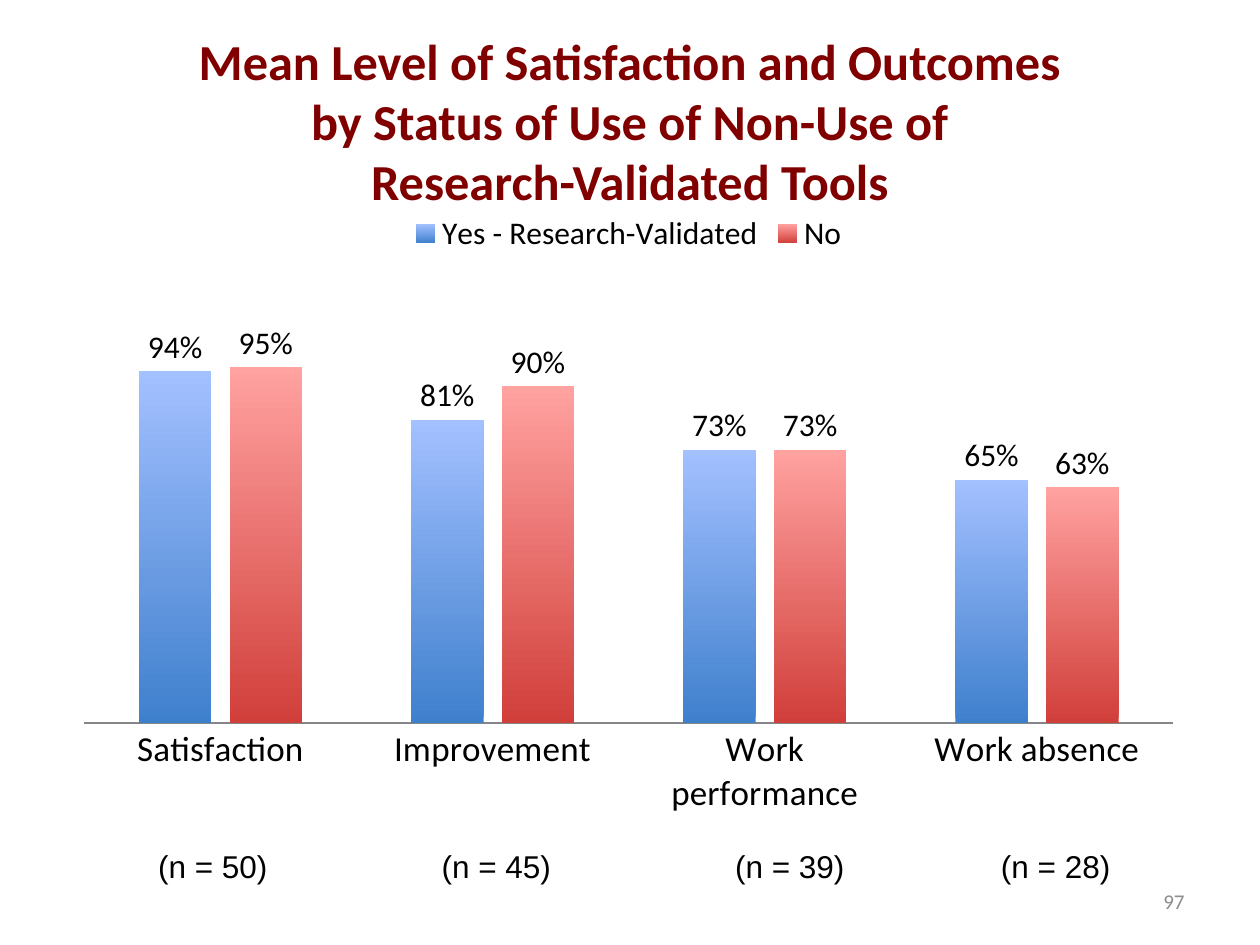
"""Build a slide comparing outcomes with and without research-validated tools."""
import lxml.etree
import pptx
import pptx.chart.data
import pptx.dml.color
import pptx.enum.chart
import pptx.enum.text
import pptx.oxml.ns
import pptx.util

Inches = pptx.util.Inches
Pt = pptx.util.Pt
RGBColor = pptx.dml.color.RGBColor
qn = pptx.oxml.ns.qn
ALIGN = pptx.enum.text.PP_ALIGN
ANCHOR = pptx.enum.text.MSO_ANCHOR

MAROON = RGBColor(0x80, 0x00, 0x00)
BLACK = RGBColor(0x00, 0x00, 0x00)
GRAY = RGBColor(0x8C, 0x8C, 0x8C)
AXIS_GRAY = RGBColor(0x86, 0x86, 0x86)
BLUES = (RGBColor(0x3F, 0x80, 0xCD), RGBColor(0xA3, 0xC0, 0xFF))
REDS = (RGBColor(0xD1, 0x3F, 0x3B), RGBColor(0xFF, 0xA2, 0xA0))

CATEGORIES = ("Satisfaction", "Improvement", "Work performance", "Work absence")
SERIES = (
    ("Yes - Research-Validated", (0.94, 0.81, 0.73, 0.65), BLUES),
    ("No", (0.95, 0.9, 0.73, 0.63), REDS),
)
SAMPLES = ((50, 0.84), (45, 3.09), (39, 5.42), (28, 7.53))
PLOT_LAYOUT = {"layoutTarget": "inner", "xMode": "edge", "yMode": "edge",
               "x": 0.02, "y": 0.12, "w": 0.96, "h": 0.72}


def apply(obj, **values):
    """Set each named attribute of an object."""
    for name, value in values.items():
        setattr(obj, name, value)


def set_font(font, size, color=BLACK, name="Calibri", bold=False):
    """Format a font."""
    apply(font, size=Pt(size), name=name, bold=bold)
    font.color.rgb = color


def add_text(s, text, box, align, anchor=ANCHOR.MIDDLE, **font):
    """Add a one-paragraph text box and return its paragraph."""
    tf = s.shapes.add_textbox(*map(Inches, box)).text_frame
    apply(tf, word_wrap=True, vertical_anchor=anchor)
    p = tf.paragraphs[0]
    apply(p, text=text, alignment=align)
    for r in p.runs:
        set_font(r.font, **font)
    return p


def add_sample_sizes(s):
    """Add the row of sample sizes, centred on tab stops."""
    text = "".join(f"\t(n = {n})" for n, _ in SAMPLES)
    p = add_text(s, text, (0.75, 6.67, 8.58, 0.4), ALIGN.LEFT, ANCHOR.TOP,
                 size=18, name="Arial")
    tabs = lxml.etree.SubElement(p._p.get_or_add_pPr(), qn("a:tabLst"))
    for _, pos in SAMPLES:
        lxml.etree.SubElement(tabs, qn("a:tab"), pos=str(Inches(pos)), algn="ctr")


def set_plot_layout(chart):
    """Fix the inner plot area as fractions of the chart."""
    area = chart._chartSpace.find(".//" + qn("c:plotArea"))
    for old in area.findall(qn("c:layout")):
        area.remove(old)
    layout = lxml.etree.Element(qn("c:layout"))
    manual = lxml.etree.SubElement(layout, qn("c:manualLayout"))
    for tag, value in PLOT_LAYOUT.items():
        lxml.etree.SubElement(manual, qn("c:" + tag), val=str(value))
    area.insert(0, layout)


def format_series(series, colors):
    """Give a series a vertical gradient and percent labels."""
    fill = series.format.fill
    fill.gradient()
    fill.gradient_angle = 90
    for stop, color in zip(fill.gradient_stops, colors):
        stop.color.rgb = color
    series.invert_if_negative = False
    labels = series.data_labels
    apply(labels, show_value=True, number_format="0%", number_format_is_linked=False,
          position=pptx.enum.chart.XL_LABEL_POSITION.OUTSIDE_END)
    set_font(labels.font, 18)


def add_outcome_chart(s):
    """Add the clustered column chart."""
    data = pptx.chart.data.CategoryChartData(number_format="0%")
    data.categories = CATEGORIES
    for name, values, _ in SERIES:
        data.add_series(name, values)
    chart = s.shapes.add_chart(pptx.enum.chart.XL_CHART_TYPE.COLUMN_CLUSTERED,
                               *map(Inches, (0.49, 1.58, 9, 4.95)), data).chart
    apply(chart, has_title=False, has_legend=True)
    set_font(chart.font, 18)
    apply(chart.legend, include_in_layout=False,
          position=pptx.enum.chart.XL_LEGEND_POSITION.TOP)
    set_font(chart.legend.font, 18)
    apply(chart.value_axis, minimum_scale=0, maximum_scale=1.2, major_unit=1.2,
          has_major_gridlines=False, visible=False)
    axis = chart.category_axis
    axis.major_tick_mark = pptx.enum.chart.XL_TICK_MARK.NONE
    axis.format.line.color.rgb = AXIS_GRAY
    set_font(axis.tick_labels.font, 20)
    plot = chart.plots[0]
    apply(plot, gap_width=150, overlap=-25, vary_by_categories=False)
    for series, (_, _, colors) in zip(plot.series, SERIES):
        format_series(series, colors)
    set_plot_layout(chart)


def main():
    """Build and save the slide."""
    prs = pptx.Presentation()
    apply(prs, slide_width=Inches(10), slide_height=Inches(7.5))
    s = prs.slides.add_slide(prs.slide_layouts[6])
    title = ("Mean Level of Satisfaction and Outcomes\v"
             "by Status of Use of Non-Use of\vResearch-Validated Tools")
    add_text(s, title, (0.5, 0.33, 9, 1.25), ALIGN.CENTER,
             size=28.8, color=MAROON, bold=True)
    add_text(s, "97", (7.17, 6.95, 2.33, 0.4), ALIGN.RIGHT, size=12, color=GRAY)
    add_outcome_chart(s)
    add_sample_sizes(s)
    prs.save("out.pptx")


if __name__ == "__main__":
    main()
